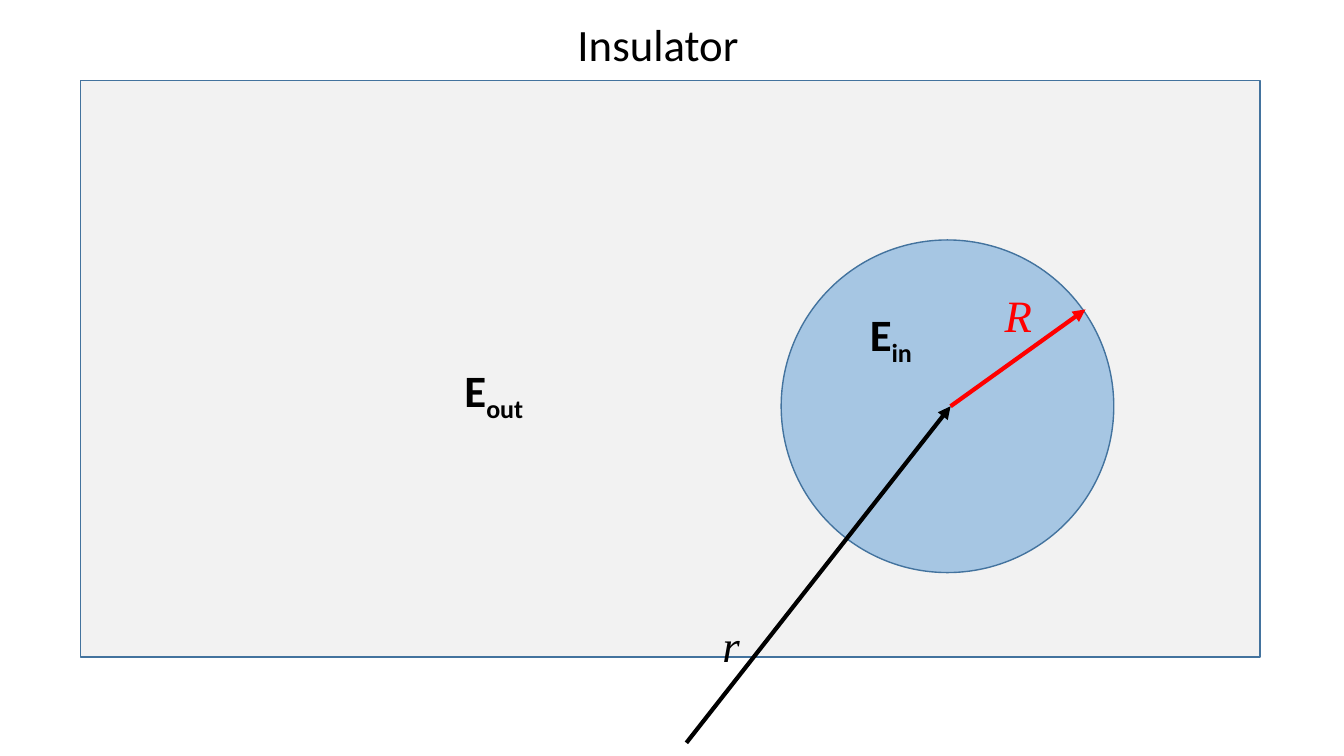
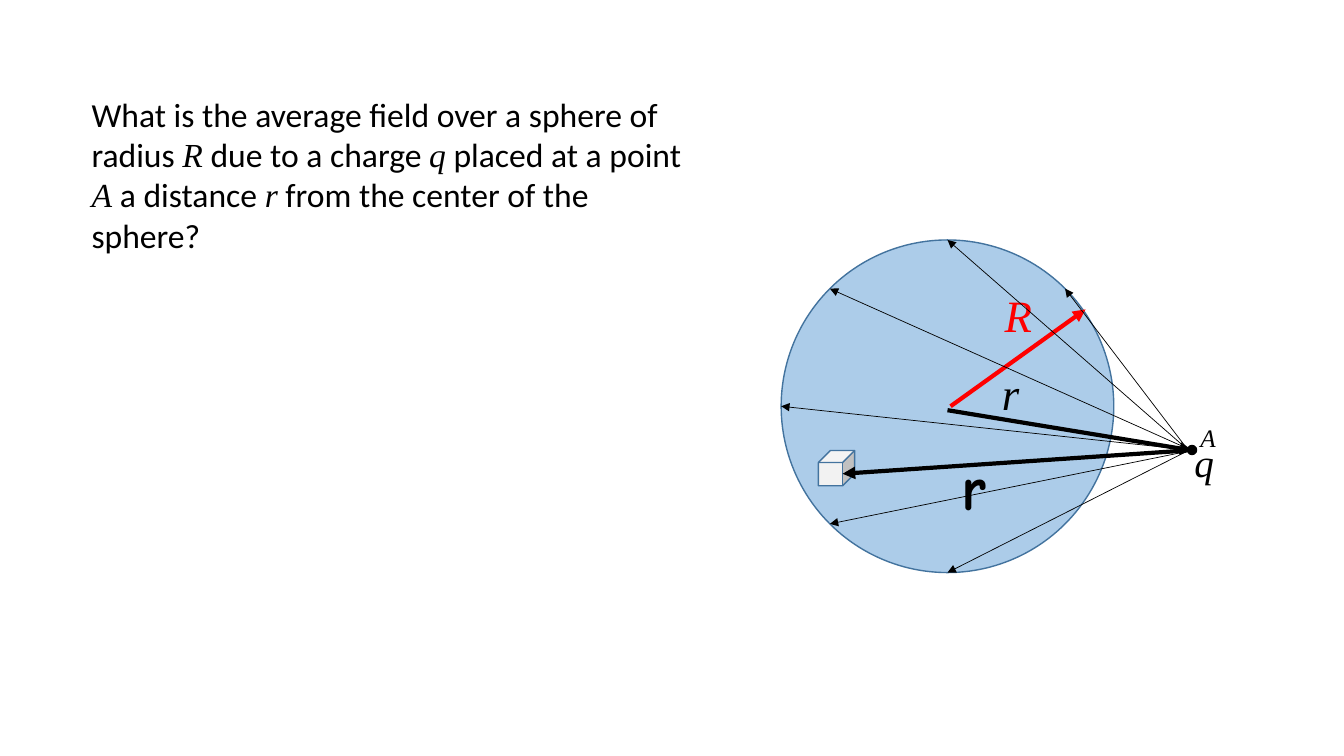
"""Build two slides on the electric field in and around a sphere."""
from dataclasses import dataclass
from math import cos, radians, sin
from typing import NamedTuple

from pptx import Presentation
from pptx import util as u
from pptx.dml.color import RGBColor
from pptx.enum import shapes, text
from pptx.oxml import ns, xmlchemy


class Point(NamedTuple):
    x: float
    y: float


class Box(NamedTuple):
    left: float
    top: float
    width: float
    height: float


@dataclass(frozen=True)
class Theme:
    ink: str = "000000"
    red: str = "FF0000"
    blue: str = "5B9BD5"
    edge: str = "43739E"
    pale: str = "F2F2F2"
    sans: str = "Calibri"
    serif: str = "Times New Roman"
    comic: str = "Comic Neue"
    huge: int = 44
    large: int = 32
    mid: int = 28
    body: int = 24
    small: int = 18
    thin: float = 0.5
    line: float = 1
    bold: float = 3


@dataclass(frozen=True)
class Style:
    face: str
    size: int
    color: str
    bold: bool = False
    italic: bool = False


@dataclass(frozen=True)
class Label:
    words: str
    box: Box
    style: Style
    sub: str = ""


@dataclass(frozen=True)
class Arrow:
    start: Point
    end: Point
    color: str
    width: float


T = Theme()
TITLE = Style(T.sans, T.large, T.ink)
FIELD = Style(T.sans, T.large, T.ink, bold=True)
SYMBOL = Style(T.serif, T.large, T.ink, italic=True)
RADIUS = Style(T.serif, T.large, T.red, italic=True)
CHARGE = Style(T.serif, T.mid, T.ink, italic=True)
POINT = Style(T.serif, T.small, T.ink, italic=True)
VECTOR = Style(T.comic, T.huge, T.ink, bold=True)

CENTER = Point(676.8, 290.2)
REACH = 118.8
HUB = Point(679, 290.2)
SPHERE = Box(CENTER.x - REACH, CENTER.y - REACH, 2 * REACH, 2 * REACH)
RAYS = {
    90: Point(846.7, 319.7),
    135: Point(846.7, 319.7),
    180: Point(846.7, 321.1),
    225: Point(847.4, 322.6),
    270: Point(850.3, 321.1),
    45: Point(848.9, 321.8),
}
QUESTION = (
    ("What is the average field over a sphere of radius ", False),
    ("R", True),
    (" due to a charge ", False),
    ("q", True),
    (" placed at a point ", False),
    ("A ", True),
    ("a distance ", False),
    ("r", True),
    (" from the center of the sphere?", False),
)


def place(box: Box) -> list:
    """Turn a box into lengths."""
    return [u.Pt(side) for side in box]


def rim(angle: float) -> Point:
    """Find the point of the sphere's edge at an angle in degrees."""
    turn = radians(angle)
    return Point(CENTER.x + REACH * cos(turn), CENTER.y - REACH * sin(turn))


def solid(slide, kind, box: Box, fill: str, edge: str = T.edge):
    """Draw a filled and outlined shape."""
    shape = slide.shapes.add_shape(kind, *place(box))
    shape.shadow.inherit = False
    shape.fill.solid()
    shape.fill.fore_color.rgb = RGBColor.from_string(fill)
    shape.line.color.rgb = RGBColor.from_string(edge)
    shape.line.width = u.Pt(T.line)
    return shape


def draw(slide, arrow: Arrow) -> None:
    """Draw a straight arrow with a triangular head."""
    ends = [u.Pt(value) for value in (*arrow.start, *arrow.end)]
    line = slide.shapes.add_connector(shapes.MSO_CONNECTOR.STRAIGHT, *ends)
    line.line.color.rgb = RGBColor.from_string(arrow.color)
    line.line.width = u.Pt(arrow.width)
    props = line._element.spPr
    head = xmlchemy.OxmlElement("a:tailEnd")
    head.set("type", "triangle")
    props.find(ns.qn("a:ln")).append(head)
    props.append(xmlchemy.OxmlElement("a:effectLst"))


def frame(slide, box: Box, wrap: bool = False):
    """Add a text box and return its first paragraph."""
    body = slide.shapes.add_textbox(*place(box)).text_frame
    body.word_wrap = wrap
    body.auto_size = text.MSO_AUTO_SIZE.SHAPE_TO_FIT_TEXT
    return body.paragraphs[0]


def write(slide, label: Label) -> None:
    """Write a label with an optional subscript."""
    para = frame(slide, label.box)
    style, font = label.style, para.font
    font.name, font.size = style.face, u.Pt(style.size)
    font.bold, font.italic = style.bold, style.italic
    font.color.rgb = RGBColor.from_string(style.color)
    para.add_run().text = label.words
    if label.sub:
        run = para.add_run()
        run.text = label.sub
        run._r.get_or_add_rPr().set("baseline", "-25000")


def sphere(slide) -> None:
    """Draw the translucent sphere with its radius."""
    ball = solid(slide, shapes.MSO_SHAPE.OVAL, SPHERE, T.blue)
    tint = ball._element.spPr.find(ns.qn("a:solidFill"))[0]
    alpha = xmlchemy.OxmlElement("a:alpha")
    alpha.set("val", "50000")
    tint.append(alpha)
    write(slide, Label("R", Box(710.6, 202.3, 34.6, 46), RADIUS))
    draw(slide, Arrow(HUB, Point(775.4, 221), T.red, T.bold))


def fields(slide) -> None:
    """Show the sphere inside an insulator."""
    slab = Box(57.6, 57.6, 842.4, 411.8)
    solid(slide, shapes.MSO_SHAPE.RECTANGLE, slab, T.pale)
    write(slide, Label("Insulator", Box(405.4, 8.6, 131, 46), TITLE))
    sphere(slide)
    draw(slide, Arrow(Point(490.3, 530.6), HUB, T.ink, T.bold))
    for label in (
        Label("r", Box(509, 437.8, 27.4, 46), SYMBOL),
        Label("E", Box(324.7, 255.6, 60.5, 46), FIELD, "out"),
        Label("E", Box(614.2, 215.3, 47.5, 46), FIELD, "in"),
    ):
        write(slide, label)


def average(slide) -> None:
    """Ask for the average field of an outside charge."""
    sphere(slide)
    write(slide, Label("r", Box(708.5, 257.8, 27.4, 46), SYMBOL))
    dot = Box(848.2, 318.2, 6.5, 6.5)
    solid(slide, shapes.MSO_SHAPE.OVAL, dot, T.ink, T.ink)
    write(slide, Label("q", Box(846, 309.6, 28.8, 41), CHARGE))
    cube = solid(slide, shapes.MSO_SHAPE.CUBE, Box(584.6, 321.8, 25.9, 25.2), T.pale)
    cube.adjustments[0] = 0.34
    write(slide, Label("r", Box(679.7, 316.8, 31, 60.5), VECTOR))
    draw(slide, Arrow(Point(847.4, 321.8), Point(601.9, 338.4), T.ink, T.bold))
    draw(slide, Arrow(Point(676.8, 293), Point(851.8, 321.8), T.ink, T.bold))
    para = frame(slide, Box(58.3, 63.4, 447.1, 123.8), wrap=True)
    para.font.size = u.Pt(T.body)
    para.font.color.rgb = RGBColor.from_string(T.ink)
    for words, symbol in QUESTION:
        run = para.add_run()
        run.text = words
        run.font.name = T.serif if symbol else T.sans
        run.font.italic = symbol
    write(slide, Label("A", Box(850.3, 298.1, 25.9, 28.8), POINT))
    for angle, start in RAYS.items():
        draw(slide, Arrow(start, rim(angle), T.ink, T.thin))


def main() -> None:
    """Build and save the slides."""
    deck = Presentation()
    deck.slide_width, deck.slide_height = u.Pt(960), u.Pt(540)
    for fill in (fields, average):
        fill(deck.slides.add_slide(deck.slide_layouts[6]))
    deck.save("out.pptx")


if __name__ == "__main__":
    main()
